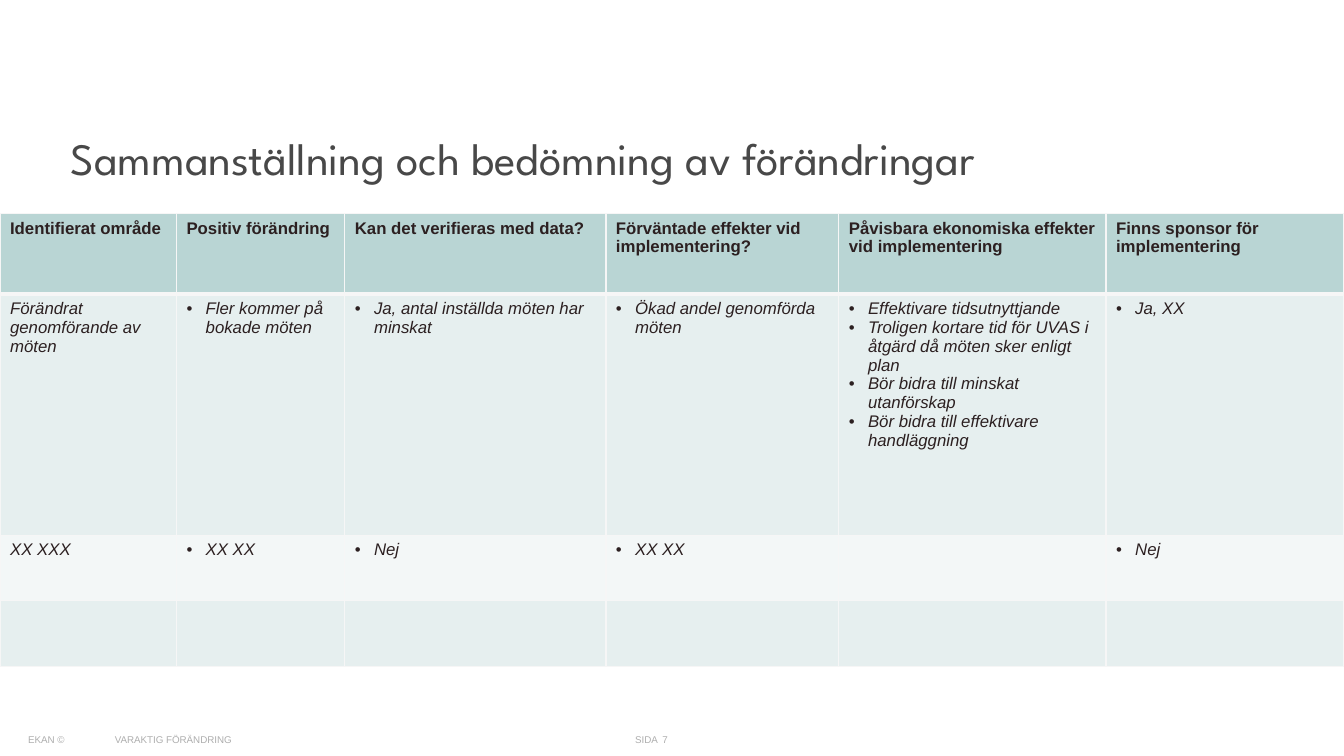
"""Build a slide with a table that sums up and assesses changes."""
from lxml import etree
from pptx import Presentation
from pptx.dml.color import RGBColor
from pptx.enum.text import MSO_ANCHOR, MSO_AUTO_SIZE, PP_ALIGN
from pptx.oxml.ns import qn
from pptx.util import Inches, Pt

TOP, MIDDLE, BOTTOM = MSO_ANCHOR.TOP, MSO_ANCHOR.MIDDLE, MSO_ANCHOR.BOTTOM
LEFT, FIXED = PP_ALIGN.LEFT, MSO_AUTO_SIZE.NONE

COLORS = {"title": "484848", "text": "2C2021", "foot": "AEAEAE", "line": "F6F6F6",
          "head": "B9D5D4", "odd": "E6EFEF", "even": "F3F7F7"}

TITLE = "Sammanställning och bedömning av förändringar"
HEADS = ["Identifierat område", "Positiv förändring", "Kan det verifieras med data?",
         "Förväntade effekter vid implementering?",
         "Påvisbara ekonomiska effekter vid implementering",
         "Finns sponsor för implementering"]
ROWS = [
    [[head] for head in HEADS],
    [["Förändrat genomförande av möten"],
     ["Fler kommer på bokade möten"],
     ["Ja, antal inställda möten har minskat"],
     ["Ökad andel genomförda möten"],
     ["Effektivare tidsutnyttjande",
      "Troligen kortare tid för UVAS i åtgärd då möten sker enligt plan",
      "Bör bidra till minskat utanförskap",
      "Bör bidra till effektivare handläggning"],
     ["Ja, XX"]],
    [["XX XXX"], ["XX XX"], ["Nej"], ["XX XX"], [], ["Nej"]],
    [[]] * len(HEADS),
]
WIDTHS = [1.75, 1.67, 2.59, 2.31, 2.65, 2.36]
HEIGHTS = [0.8, 2.39, 0.65, 0.65]
FOOTS = [
    ("SIDA", (6.3, 7.24, 0.24, 0.2), TOP, 0.04),
    ("EKAN ©", (0.28, 7.24, 0.55, 0.16), TOP, 0.04),
    ("7", (6.57, 7.26, 0.24, 0.16), MIDDLE, 0.05),
    ("VARAKTIG FÖRÄNDRING", (1.14, 7.26, 4.96, 0.16), MIDDLE, 0.05),
]
FONTS = {
    "title": {"name": "League Spartan", "size": Pt(32), "bold": False},
    "foot": {"name": "Arial", "size": Pt(7)},
    "head": {"name": "Arial", "size": Pt(12), "bold": True},
    "body": {"name": "Arial", "size": Pt(12), "bold": False, "italic": True},
}


def style(font, kind, color):
    for key, value in FONTS[kind].items():
        setattr(font, key, value)
    font.color.rgb = RGBColor.from_string(COLORS[color])


def fill_frame(shape, text, kind, anchor, pad):
    frame = shape.text_frame
    frame.text = text
    form = {"word_wrap": True, "auto_size": FIXED, "vertical_anchor": anchor,
            "margin_left": 0, "margin_right": 0,
            "margin_top": Inches(pad), "margin_bottom": Inches(pad)}
    for key, value in form.items():
        setattr(frame, key, value)
    para = frame.paragraphs[0]
    para.alignment = LEFT
    style(para.runs[0].font, kind, kind)


def add_bullet(para):
    props = para._p.get_or_add_pPr()
    props.set("marL", str(Inches(0.19)))
    props.set("indent", str(-Inches(0.19)))
    etree.SubElement(props, qn("a:buFont"), typeface="Arial")
    etree.SubElement(props, qn("a:buChar"), char="•")


def add_edges(cell, row):
    thick = {0: "lnB", 1: "lnT"}.get(row)
    props = cell._tc.get_or_add_tcPr()
    for spot, side in enumerate(("lnL", "lnR", "lnT", "lnB")):
        line = etree.Element(qn("a:" + side), w=str(Pt(3 if side == thick else 1)))
        fill = etree.SubElement(line, qn("a:solidFill"))
        etree.SubElement(fill, qn("a:srgbClr"), val=COLORS["line"])
        props.insert(spot, line)


def fill_cell(cell, lines, row, col):
    band = "head" if row == 0 else "odd" if row % 2 else "even"
    cell.fill.solid()
    cell.fill.fore_color.rgb = RGBColor.from_string(COLORS[band])
    add_edges(cell, row)
    frame = cell.text_frame
    for spot, line in enumerate(lines):
        para = frame.add_paragraph() if spot else frame.paragraphs[0]
        if row and col:
            add_bullet(para)
        run = para.add_run()
        run.text = line
        style(run.font, "body" if row else "head", "text")


def main():
    deck = Presentation()
    deck.slide_width, deck.slide_height = Inches(13.33), Inches(7.5)
    slide = deck.slides.add_slide(deck.slide_layouts[5])

    for text, box, anchor, pad in FOOTS:
        shape = slide.shapes.add_textbox(*map(Inches, box))
        fill_frame(shape, text, "foot", anchor, pad)

    title = slide.shapes.title
    place = {"left": 0.7, "top": 0.51, "width": 11.95, "height": 1.37}
    for key, value in place.items():
        setattr(title, key, Inches(value))
    fill_frame(title, TITLE, "title", BOTTOM, 0.05)

    box = (0, 2.12, sum(WIDTHS), sum(HEIGHTS))
    table = slide.shapes.add_table(len(ROWS), len(HEADS), *map(Inches, box)).table
    for col, width in zip(table.columns, WIDTHS):
        col.width = Inches(width)
    for row, height in zip(table.rows, HEIGHTS):
        row.height = Inches(height)
    for row, cells in enumerate(ROWS):
        for col, lines in enumerate(cells):
            fill_cell(table.cell(row, col), lines, row, col)

    deck.save("out.pptx")


if __name__ == "__main__":
    main()
